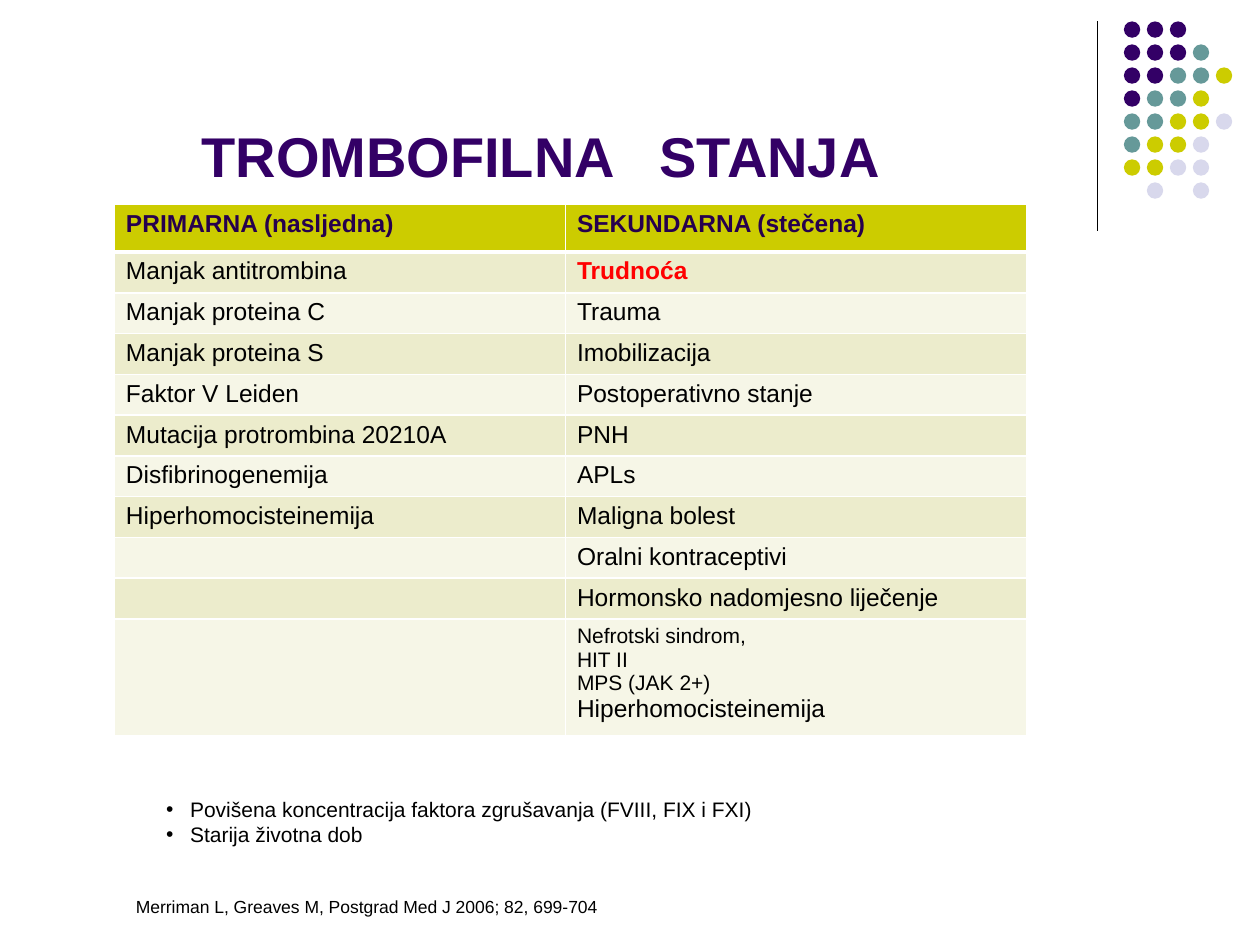
from lxml.etree import SubElement
from pptx import Presentation
from pptx.dml.color import RGBColor
from pptx.enum.shapes import MSO_CONNECTOR, MSO_SHAPE
from pptx.enum.text import MSO_ANCHOR
from pptx.oxml.ns import qn
from pptx.util import Inches, Pt

FONT = "Arial"
COLORS = {
    "purple": "330066",
    "teal": "669999",
    "olive": "CCCC00",
    "lavender": "D8D8EC",
    "header_text": "26004D",
    "band_dark": "ECECCC",
    "band_light": "F6F6E7",
    "black": "000000",
    "white": "FFFFFF",
    "red": "FF0000",
}

# One letter per dot, a space where the grid has no dot
DOT_ROWS = ["PPP", "PPPT", "PPTTO", "PTTO", "TTOOL", "TOOL", "OOLL", " L L"]
DOT_COLORS = {"P": "purple", "T": "teal", "O": "olive", "L": "lavender"}

HEADERS = ["PRIMARNA (nasljedna)", "SEKUNDARNA (stečena)"]
PRIMARY = [
    "Manjak antitrombina", "Manjak proteina C", "Manjak proteina S",
    "Faktor V Leiden", "Mutacija protrombina 20210A",
    "Disfibrinogenemija", "Hiperhomocisteinemija", "", "", "",
]
SECONDARY = [
    "Trudnoća", "Trauma", "Imobilizacija", "Postoperativno stanje", "PNH",
    "APLs", "Maligna bolest", "Oralni kontraceptivi",
    "Hormonsko nadomjesno liječenje",
]
OTHER_CAUSES = ["Nefrotski sindrom,", "HIT II", "MPS (JAK 2+)"]


def rgb(name):
    return RGBColor.from_string(COLORS[name])


def write_text(frame, text, size=14, color="black", bold=False,
               indent=0, bullet=None, append=False):
    """Write one paragraph into a text frame."""
    para = frame.add_paragraph() if append else frame.paragraphs[0]
    if indent:
        properties = para._p.get_or_add_pPr()
        properties.set("marL", str(Inches(indent)))
        if bullet:
            properties.set("indent", str(-Inches(indent)))
            SubElement(properties, qn("a:buFont"), typeface=FONT)
            SubElement(properties, qn("a:buChar"), char=bullet)
    if not text:
        # Keeps an empty cell as low as a filled one
        SubElement(para._p, qn("a:endParaRPr"), sz=str(size * 100))
        return
    span = para.add_run()
    span.text = text
    span.font.name = FONT
    span.font.size = Pt(size)
    span.font.bold = bold
    span.font.color.rgb = rgb(color)


def add_box(page, left, top, width, height, anchor=MSO_ANCHOR.TOP):
    box = page.shapes.add_textbox(
        Inches(left), Inches(top), Inches(width), Inches(height))
    frame = box.text_frame
    frame.word_wrap = True
    frame.vertical_anchor = anchor
    return frame


def add_rule(page, x, top, bottom):
    rule = page.shapes.add_connector(
        MSO_CONNECTOR.STRAIGHT,
        Inches(x), Inches(top), Inches(x), Inches(bottom))
    rule.line.color.rgb = rgb("black")
    rule.line.width = Pt(0.75)
    SubElement(rule._element.spPr, qn("a:effectLst"))


def add_dots(page, left=8.92, top=0.17, size=0.13):
    step = 0.73 / 4
    group = page.shapes.add_group_shape()
    for row, letters in enumerate(DOT_ROWS):
        for column, letter in enumerate(letters):
            if letter == " ":
                continue
            dot = group.shapes.add_shape(
                MSO_SHAPE.OVAL,
                Inches(left + column * step), Inches(top + row * step),
                Inches(size), Inches(size))
            dot.fill.solid()
            dot.fill.fore_color.rgb = rgb(DOT_COLORS[letter])
            dot.line.fill.background()
            dot.shadow.inherit = False


def style_cell(cell, fill, bottom_width=1, top_width=1):
    properties = cell._tc.get_or_add_tcPr()
    widths = {"lnL": 1, "lnR": 1, "lnT": top_width, "lnB": bottom_width}
    for side, width in widths.items():
        border = SubElement(properties, qn(f"a:{side}"), w=str(Pt(width)))
        solid = SubElement(border, qn("a:solidFill"))
        SubElement(solid, qn("a:srgbClr"), val=COLORS["white"])
    cell.fill.solid()
    cell.fill.fore_color.rgb = rgb(fill)
    cell.margin_left = cell.margin_right = Inches(0.09)
    cell.margin_top = cell.margin_bottom = Inches(0.045)


def add_states_table(page):
    heights = [0.38] + [0.32] * 9 + [0.88]
    widths = [3.58, 3.66]
    table = page.shapes.add_table(
        len(heights), len(widths), Inches(0.91), Inches(1.62),
        Inches(sum(widths)), Inches(sum(heights))).table
    for column, width in zip(table.columns, widths):
        column.width = Inches(width)
    for row, height in zip(table.rows, heights):
        row.height = Inches(height)

    # Header row
    for column, header in enumerate(HEADERS):
        cell = table.cell(0, column)
        style_cell(cell, "olive", bottom_width=3)
        write_text(cell.text_frame, header, color="header_text", bold=True)

    # Banded body rows
    for column, entries in enumerate([PRIMARY, SECONDARY]):
        for row in range(1, len(heights)):
            cell = table.cell(row, column)
            style_cell(cell, "band_dark" if row % 2 else "band_light",
                       top_width=3 if row == 1 else 1)
            if row <= len(entries):
                text = entries[row - 1]
                marked = text == "Trudnoća"
                write_text(cell.text_frame, text, bold=marked,
                           color="red" if marked else "black")

    # Last cell lists several causes
    frame = table.cell(len(heights) - 1, 1).text_frame
    for index, cause in enumerate(OTHER_CAUSES):
        write_text(frame, cause, size=12, append=index > 0)
    write_text(frame, "Hiperhomocisteinemija", append=True)


def main():
    deck = Presentation()
    deck.slide_width = Inches(10)
    deck.slide_height = Inches(7.5)
    page = deck.slides.add_slide(deck.slide_layouts[6])

    # Corner decoration
    add_rule(page, 8.71, 0.17, 1.83)
    add_dots(page)

    # Title
    title = add_box(page, 0.5, 0.13, 8.25, 1.42, anchor=MSO_ANCHOR.BOTTOM)
    write_text(title, "TROMBOFILNA   STANJA", size=32, color="purple",
               bold=True, indent=1)

    add_states_table(page)

    # Further risk factors
    factors = add_box(page, 1.22, 6.27, 6.38, 0.5)
    write_text(factors,
               "Povišena koncentracija faktora zgrušavanja (FVIII, FIX i FXI)",
               size=12, indent=0.19, bullet="•")
    write_text(factors, "Starija životna dob", size=12, indent=0.19,
               bullet="•", append=True)

    # Reference
    reference = add_box(page, 0.98, 7.06, 6.69, 0.27)
    write_text(reference,
               "Merriman L, Greaves M, Postgrad Med J 2006; 82, 699-704",
               size=10)

    deck.save("out.pptx")


if __name__ == "__main__":
    main()
